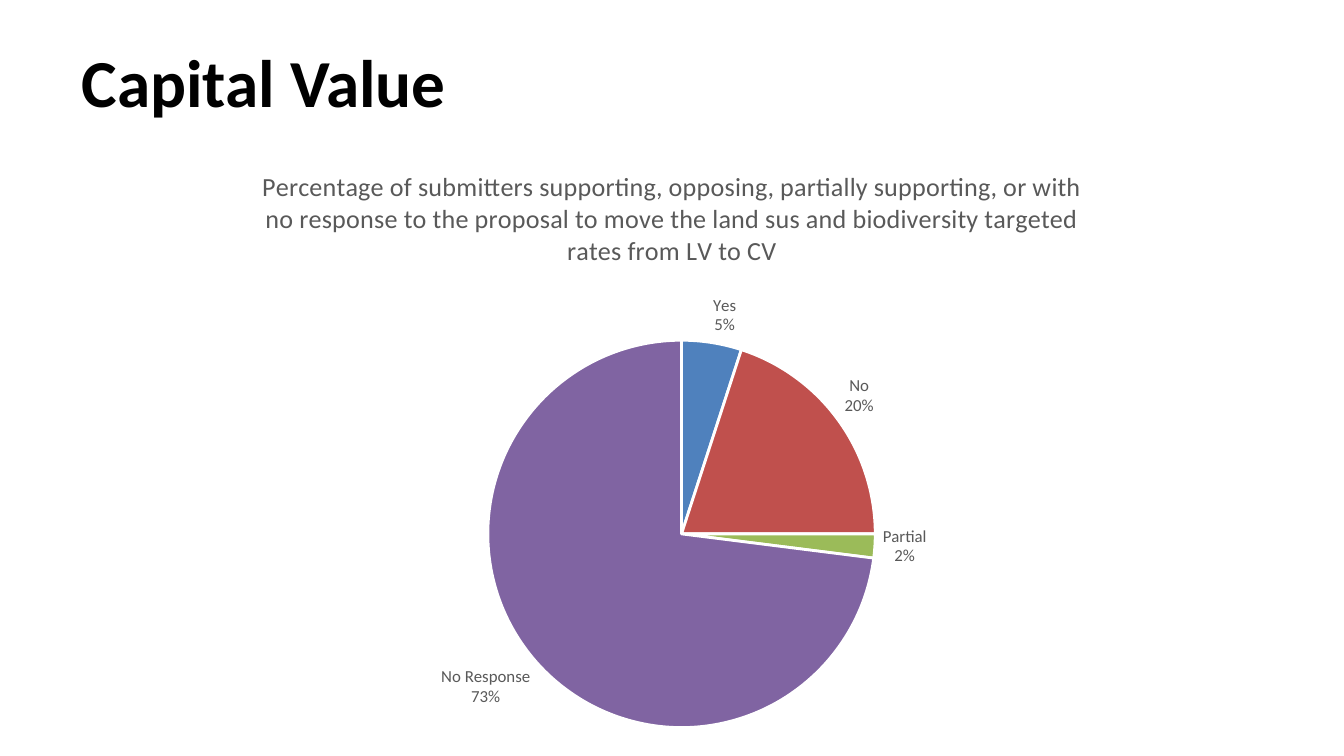
"""Build the Capital Value slide with its pie chart of submitter responses."""
from dataclasses import dataclass

from lxml.etree import SubElement
from pptx import Presentation
from pptx.chart.data import CategoryChartData
from pptx.dml.color import RGBColor
from pptx.enum.chart import XL_CHART_TYPE, XL_LABEL_POSITION
from pptx.enum.text import MSO_ANCHOR, PP_ALIGN
from pptx.oxml.ns import qn
from pptx.util import Inches, Pt


@dataclass(frozen=True)
class Theme:
    font: str = "Calibri"
    ink: str = "000000"
    muted: str = "595959"
    gap: str = "FFFFFF"
    slices: tuple = ("4F81BD", "C0504D", "9BBB59", "8064A2")
    heading: float = 36
    question: float = 14
    base: float = 10
    label: float = 9
    gap_width: float = 1.5


THEME = Theme()
WIDTH = Inches(10)
HEIGHT = WIDTH * 9 // 16
QUESTION = (
    "Percentage of submitters supporting, opposing, partially supporting, or with "
    "no response to the proposal to move the land sus and biodiversity targeted "
    "rates from LV to CV"
)
RESPONSES = {"Yes": 5, "No": 20, "Partial": 2, "No Response": 73}
PIE_PERCENT = {"x": 32.7, "y": 32.1, "w": 36.4, "h": 63.3}


def percent_area(left, top, width, height):
    return (int(WIDTH * left / 100), int(HEIGHT * top / 100),
            int(WIDTH * width / 100), int(HEIGHT * height / 100))


def style_font(font, size, color, bold=False):
    font.name = THEME.font
    font.size = Pt(size)
    font.bold = bold
    font.color.rgb = RGBColor.from_string(color)


def write_text(frame, text, *, size, color, bold=False, align=PP_ALIGN.LEFT):
    paragraph = frame.paragraphs[0]
    paragraph.alignment = align
    run = paragraph.add_run()
    run.text = text
    style_font(run.font, size, color, bold)


def add_heading(slide, text, area):
    frame = slide.shapes.add_textbox(*area).text_frame
    frame.word_wrap = True
    frame.vertical_anchor = MSO_ANCHOR.MIDDLE
    write_text(frame, text, size=THEME.heading, color=THEME.ink, bold=True)


def place_plot(chart, percents):
    plot_area = chart.plots[0]._element.getparent()
    layout = plot_area.find(qn("c:layout"))
    if layout is None:
        layout = SubElement(plot_area, qn("c:layout"))
        plot_area.insert(0, layout)
    manual = SubElement(layout, qn("c:manualLayout"))
    settings = {"layoutTarget": "inner", "xMode": "edge", "yMode": "edge"}
    settings.update({side: value / 100 for side, value in percents.items()})
    for key, value in settings.items():
        SubElement(manual, qn(f"c:{key}")).set("val", str(value))


def label_slices(plot):
    plot.has_data_labels = True
    labels = plot.data_labels
    labels.show_value = False
    labels.show_category_name = True
    labels.show_percentage = True
    labels.number_format = "0%"
    labels.number_format_is_linked = False
    labels.position = XL_LABEL_POSITION.OUTSIDE_END
    style_font(labels.font, THEME.label, THEME.muted)
    separator = SubElement(labels._element, qn("c:separator"))
    separator.text = "\n"
    labels._element.find(qn("c:showBubbleSize")).addnext(separator)


def add_pie(slide, question, responses, area):
    data = CategoryChartData(number_format="0")
    data.categories = responses.keys()
    data.add_series("Series 1", responses.values())
    chart = slide.shapes.add_chart(XL_CHART_TYPE.PIE, *area, data).chart
    style_font(chart.font, THEME.base, THEME.ink)
    chart.has_legend = False
    chart.has_title = True
    chart.chart_title.include_in_layout = False
    write_text(chart.chart_title.text_frame, question, size=THEME.question,
               color=THEME.muted, align=PP_ALIGN.CENTER)
    pie = chart.plots[0]
    pie.vary_by_categories = True
    for index, color in enumerate(THEME.slices):
        wedge = pie.series[0].points[index].format
        wedge.fill.solid()
        wedge.fill.fore_color.rgb = RGBColor.from_string(color)
        wedge.line.color.rgb = RGBColor.from_string(THEME.gap)
        wedge.line.width = Pt(THEME.gap_width)
    label_slices(pie)
    place_plot(chart, PIE_PERCENT)


def main():
    deck = Presentation()
    deck.slide_width, deck.slide_height = WIDTH, HEIGHT
    slide = deck.slides.add_slide(deck.slide_layouts[6])
    add_heading(slide, "Capital Value", percent_area(5.1, 2.3, 74.2, 16.7))
    add_pie(slide, QUESTION, RESPONSES, percent_area(10.4, 19, 79.2, 81))
    deck.save("out.pptx")


if __name__ == "__main__":
    main()
